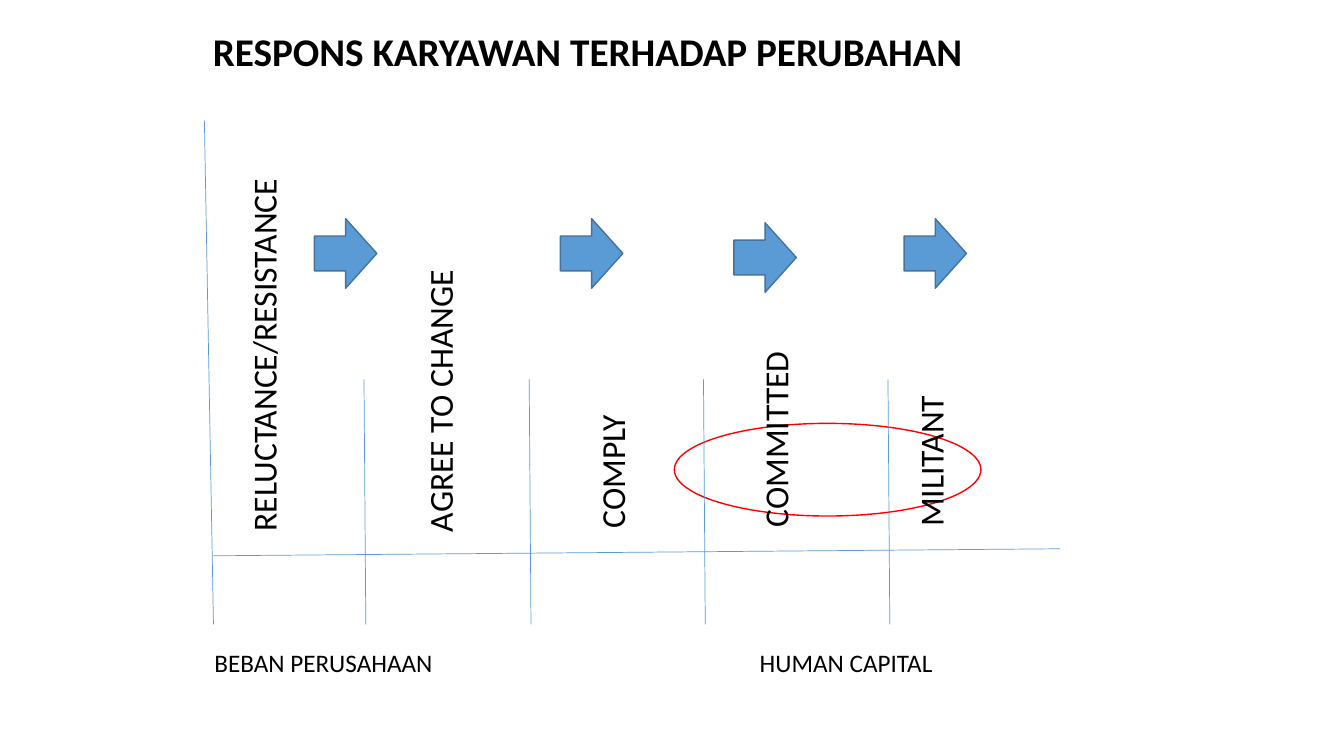
from lxml import etree
from pptx import Presentation
from pptx.dml.color import RGBColor
from pptx.enum.shapes import MSO_CONNECTOR, MSO_SHAPE
from pptx.oxml.ns import qn
from pptx.util import Pt

STRAIGHT = MSO_CONNECTOR.STRAIGHT
ELLIPSE = MSO_SHAPE.OVAL
RIGHT_ARROW = MSO_SHAPE.RIGHT_ARROW

FONT = "Calibri"
BLACK, WHITE, RED = "000000", "FFFFFF", "FF0000"
BLUE, DARK_BLUE = "5B9BD5", "43739E"

STAGES = [
    ("RELUCTANCE/RESISTANCE", 24, 300.7),
    ("AGREE TO CHANGE", 150, 301.2),
    ("COMPLY", 273, 298.5),
    ("COMMITTED", 389.7, 297.8),
    ("MILITANT", 500.5, 297.4),
]
DIVIDERS = [114, 232, 356.5, 488.3]
ARROWS = [(78.6, 70.2), (254.3, 70.2), (378.2, 73.1), (499.8, 70.2)]


def color(value):
    return RGBColor.from_string(value)


def add_text(page, text, box, size, bold=False, upright=False):
    label = page.shapes.add_textbox(*map(Pt, box))
    frame = label.text_frame
    frame.word_wrap = upright
    if upright:
        label.element.txBody.bodyPr.set("vert", "vert270")
    para = frame.paragraphs[0]
    para.text = text
    para.font.name = FONT
    para.font.size = Pt(size)
    para.font.bold = bold
    para.font.color.rgb = color(BLACK)


def add_line(page, start, end):
    line = page.shapes.add_connector(STRAIGHT, *map(Pt, (*start, *end)))
    line.line.color.rgb = color(BLUE)
    line.line.width = Pt(0.5)
    etree.SubElement(line.element.spPr, qn("a:effectLst"))


def add_figure(page, kind, box, fill, outline):
    figure = page.shapes.add_shape(kind, *map(Pt, box))
    figure.shadow.inherit = False
    figure.fill.solid()
    figure.fill.fore_color.rgb = color(fill)
    figure.line.color.rgb = color(outline)
    figure.line.width = Pt(1)


def add_axes(page, box):
    left, top, width, height = box
    slant = 6.5
    add_line(page, (left, top), (left + slant, top + height))
    add_line(page, (left + slant, top + 311), (left + width, top + 306))
    for offset in DIVIDERS:
        x = left + offset
        add_line(page, (x, top + 185), (x + 1.3, top + height))


def add_stages(page, box):
    left, top, width, height = box
    label_height = 281
    for name, x, bottom in STAGES:
        label_top = top + bottom - label_height
        add_text(page, name, (left + x, label_top, 44, label_height), 24, upright=True)
    for x, y in ARROWS:
        add_figure(page, RIGHT_ARROW, (left + x, top + y, 44.6, 49.7), BLUE, DARK_BLUE)


def add_diagram(page, box):
    left, top, width, height = box
    add_figure(page, ELLIPSE, (left + 335.7, top + 216.4, 219, 66.2), WHITE, RED)
    add_axes(page, box)
    add_stages(page, box)


def add_captions(page, box):
    left, top, width, height = box
    add_text(page, "BEBAN PERUSAHAAN", (left, top, 171, height), 18)
    add_text(page, "HUMAN CAPITAL", (left + width - 139, top, 139, height), 18)


def main():
    deck = Presentation()
    deck.slide_width, deck.slide_height = Pt(960), Pt(540)
    page = deck.slides.add_slide(deck.slide_layouts[6])
    add_diagram(page, (146, 86, 611, 360))
    add_captions(page, (146, 458.6, 528.6, 29))
    add_text(page, "RESPONS KARYAWAN TERHADAP PERUBAHAN", (145, 16, 556, 41), 28, bold=True)
    deck.save("out.pptx")


if __name__ == "__main__":
    main()
